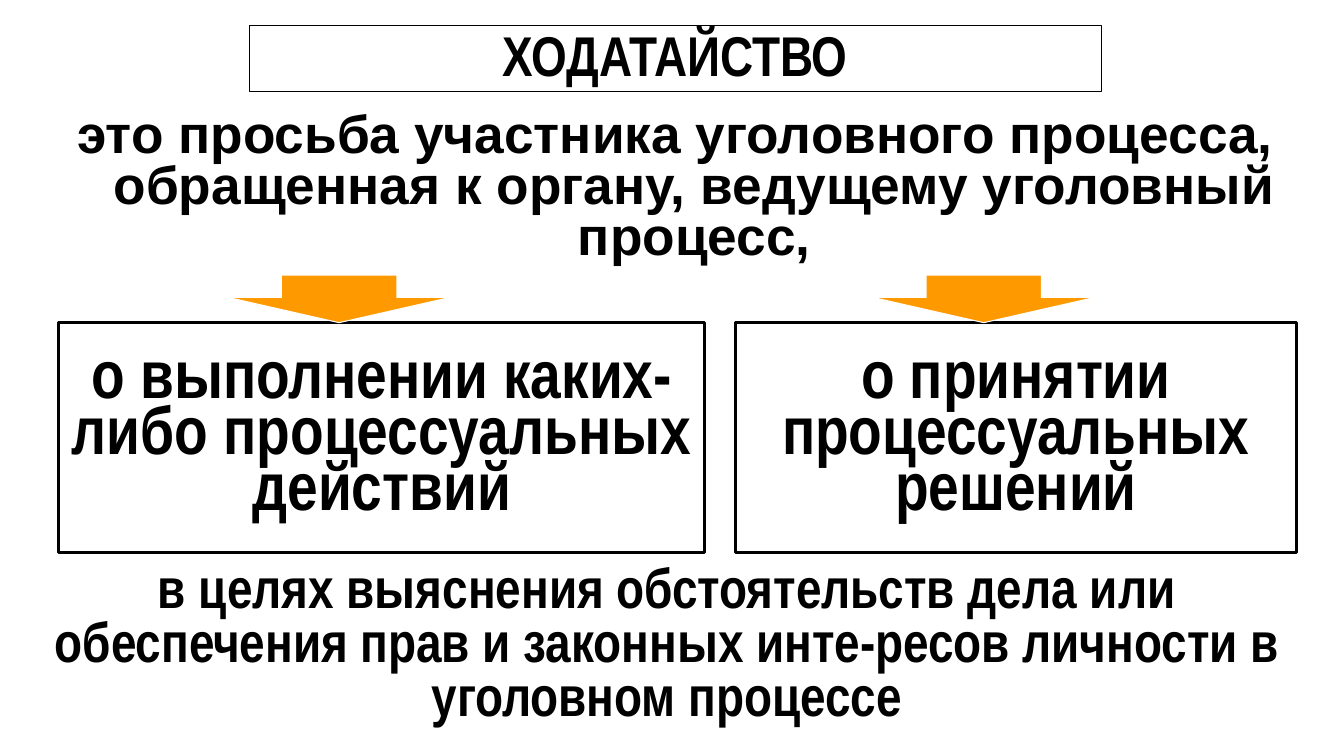
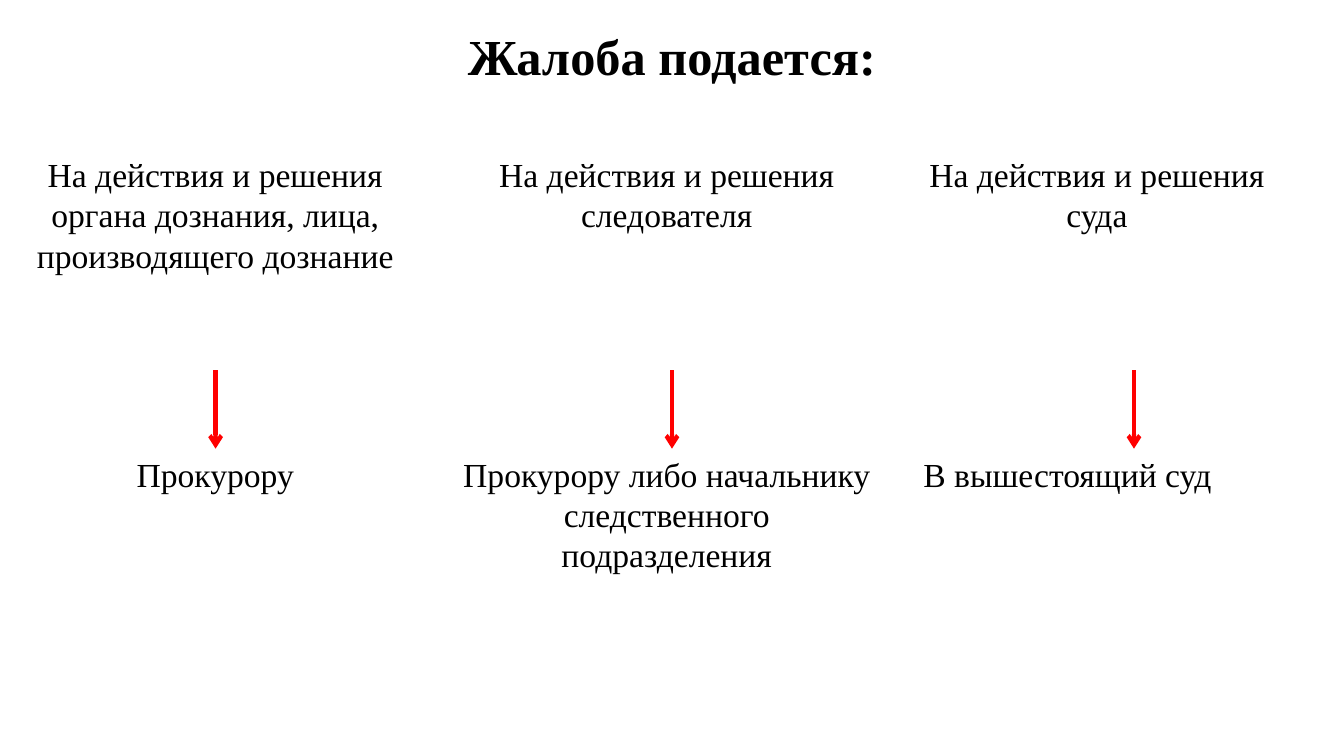
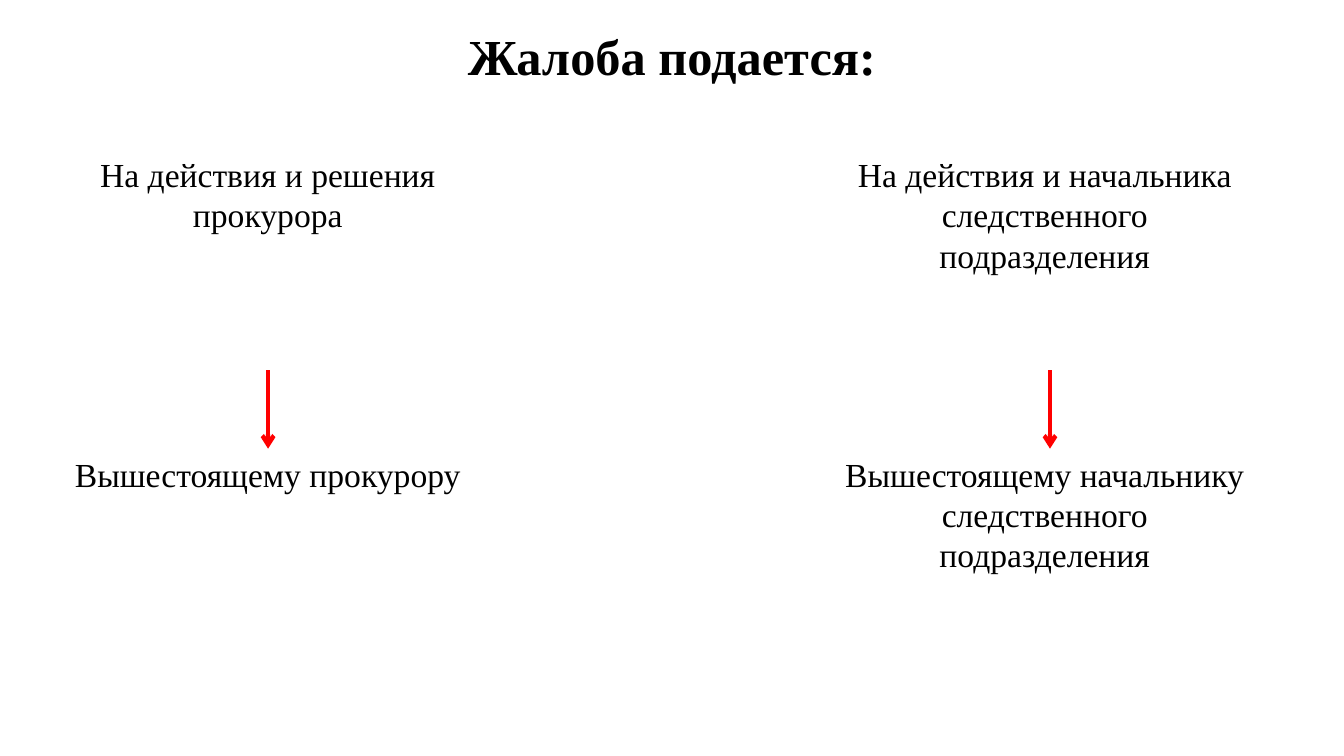
import pptx
import pptx.util
import pptx.dml.color
import pptx.enum.shapes
import pptx.enum.text
import pptx.oxml
import pptx.oxml.ns
from dataclasses import dataclass

Pt = pptx.util.Pt
ALIGN = pptx.enum.text.PP_ALIGN
ANCHOR = pptx.enum.text.MSO_ANCHOR
SHAPE = pptx.enum.shapes.MSO_SHAPE


@dataclass(frozen=True)
class Theme:
    """Colours, fonts and type styles shared by the slides."""
    black: str = "000000"
    white: str = "FFFFFF"
    orange: str = "FF9900"
    red: str = "FF0000"
    thin: float = 0.75
    frame: float = 2.25
    arrow: float = 3

    def style(self, kind):
        """Return the font values of one kind of text."""
        name, size, bold = {
            "term": ("Arial Narrow", 40, True),
            "definition": ("Arial", 38, True),
            "option": ("Arial Narrow", 48, True),
            "heading": ("Times New Roman", 36, True),
            "label": ("Times New Roman", 24, False),
        }[kind]
        return {"name": name, "size": Pt(size), "bold": bold}


THEME = Theme()


def rgb(value):
    """Turn a hex string into a colour."""
    return pptx.dml.color.RGBColor.from_string(value)


def put(sp, box):
    """Place a shape in a box of left, top, width and height."""
    for key, value in zip(("left", "top", "width", "height"), box):
        setattr(sp, key, Pt(value))


def write(sp, text, kind, align=ALIGN.CENTER, anchor=ANCHOR.MIDDLE, spacing=1.0, hang=0):
    """Write one styled paragraph into a shape."""
    tf = sp.text_frame
    frame = {"word_wrap": True, "auto_size": pptx.enum.text.MSO_AUTO_SIZE.NONE,
             "vertical_anchor": anchor}
    for key, value in frame.items():
        setattr(tf, key, value)
    p = tf.paragraphs[0]
    for key, value in {"alignment": align, "line_spacing": spacing, "space_before": Pt(0)}.items():
        setattr(p, key, value)
    if hang:
        pPr = p._p.get_or_add_pPr()
        pPr.set("marL", str(Pt(hang)))
        pPr.set("indent", str(Pt(-hang)))
    r = p.add_run()
    r.text = text
    for key, value in THEME.style(kind).items():
        setattr(r.font, key, value)
    r.font.color.rgb = rgb(THEME.black)


def paint(sp, fill, line, width):
    """Set the fill and outline of a shape."""
    sp.fill.solid()
    sp.fill.fore_color.rgb = rgb(fill)
    sp.line.color.rgb = rgb(line)
    sp.line.width = Pt(width)


def add_panel(s, box, line, width, preset=SHAPE.RECTANGLE, fill=THEME.white):
    """Add a filled preset shape without shadow."""
    sp = s.shapes.add_shape(preset, *map(Pt, box))
    sp.shadow.inherit = False
    paint(sp, fill, line, width)
    return sp


def add_title(s, box, text, kind, spacing=1.0):
    """Move and fill the title placeholder."""
    sp = s.shapes.title
    put(sp, box)
    write(sp, text, kind, spacing=spacing)
    return sp


def add_statement(s, box, text, kind, hang=0):
    """Add a bold paragraph of running text."""
    sp = s.shapes.add_textbox(*map(Pt, box))
    write(sp, text, kind, anchor=ANCHOR.TOP, spacing=0.8, hang=hang)


def add_option(s, box, text, arrow_left):
    """Add a framed option with a block arrow resting on its top edge."""
    left, top, width, height = box
    sp = add_panel(s, box, THEME.black, THEME.frame)
    write(sp, text, "option", spacing=0.7)
    arrow_height = 34
    arrow = add_panel(s, (left + arrow_left, top - arrow_height, 158.5, arrow_height),
                      THEME.white, THEME.thin, SHAPE.DOWN_ARROW, THEME.orange)
    arrow.adjustments[0], arrow.adjustments[1] = 0.52, 0.53


def add_arrow(s, x, top, bottom):
    """Add a red arrow pointing straight down."""
    cn = s.shapes.add_connector(pptx.enum.shapes.MSO_CONNECTOR.STRAIGHT,
                                *map(Pt, (x, top, x, bottom)))
    cn.line.color.rgb = rgb(THEME.red)
    cn.line.width = Pt(THEME.arrow)
    ns = pptx.oxml.ns.nsdecls("a")
    cn.line._get_or_add_ln().append(pptx.oxml.parse_xml(f'<a:tailEnd {ns} type="arrow"/>'))
    cn._element.spPr.append(pptx.oxml.parse_xml(f"<a:effectLst {ns}/>"))


def add_route(s, box, subject, addressee, arrow_x, subject_width=None, align=ALIGN.CENTER):
    """Add a column: what is appealed, an arrow, and who receives it."""
    left, top, width, height = box
    row = 158
    low = top + height - row
    labels = ((subject, top, subject_width or width, ALIGN.CENTER),
              (addressee, low, width, align))
    for text, y, w, label_align in labels:
        sp = add_panel(s, (left, y, w, row), THEME.white, THEME.thin)
        write(sp, text, "label", label_align, ANCHOR.TOP)
    add_arrow(s, left + arrow_x, top + row, low)


def add_slide(prs):
    """Add a title-only slide."""
    return prs.slides.add_slide(prs.slide_layouts[5])


def petition_slide(prs):
    """Build the slide that defines a petition."""
    s = add_slide(prs)
    sp = add_title(s, (178, 18, 608.5, 47.5), "ХОДАТАЙСТВО", "term", 0.9)
    paint(sp, THEME.white, THEME.black, THEME.thin)
    add_statement(s, (18.5, 77, 928, 119),
                  "это просьба участника уголовного процесса, обращенная к органу, "
                  "ведущему уголовный процесс,", "definition", 27)
    options = (
        (42, 461.5, "о выполнении каких-либо процессуальных действий", 121),
        (525.5, 400.5, "о принятии процессуальных решений", 98),
    )
    for left, width, text, arrow_left in options:
        add_option(s, (left, 230.5, width, 164), text, arrow_left)
    add_statement(s, (11.5, 400.5, 929.5, 119),
                  "в целях выяснения обстоятельств дела или обеспечения прав и законных "
                  "инте-ресов личности в уголовном процессе", "term")


def complaint_slide(prs, routes):
    """Build a slide of complaint routes."""
    s = add_slide(prs)
    add_title(s, (0, 0, 960, 78.5), "Жалоба подается:", "heading")
    for left, *route in routes:
        add_route(s, (left, 106.5, 307.5, 372), *route)


def main():
    """Build and save the presentation."""
    prs = pptx.Presentation()
    prs.slide_width, prs.slide_height = Pt(960), Pt(540)
    petition_slide(prs)
    complaint_slide(prs, (
        (0, "На действия и решения органа дознания, лица, производящего дознание",
         "Прокурору", 154),
        (322.5, "На действия и решения следователя",
         "Прокурору либо начальнику следственного подразделения", 157.5),
        (652.5, "На действия и решения суда", "В вышестоящий суд", 157.5, 262, ALIGN.LEFT),
    ))
    complaint_slide(prs, (
        (37.5, "На действия и решения прокурора", "Вышестоящему прокурору", 154),
        (592.5, "На действия и начальника следственного подразделения",
         "Вышестоящему начальнику следственного подразделения", 157.5),
    ))
    prs.save("out.pptx")


if __name__ == "__main__":
    main()
